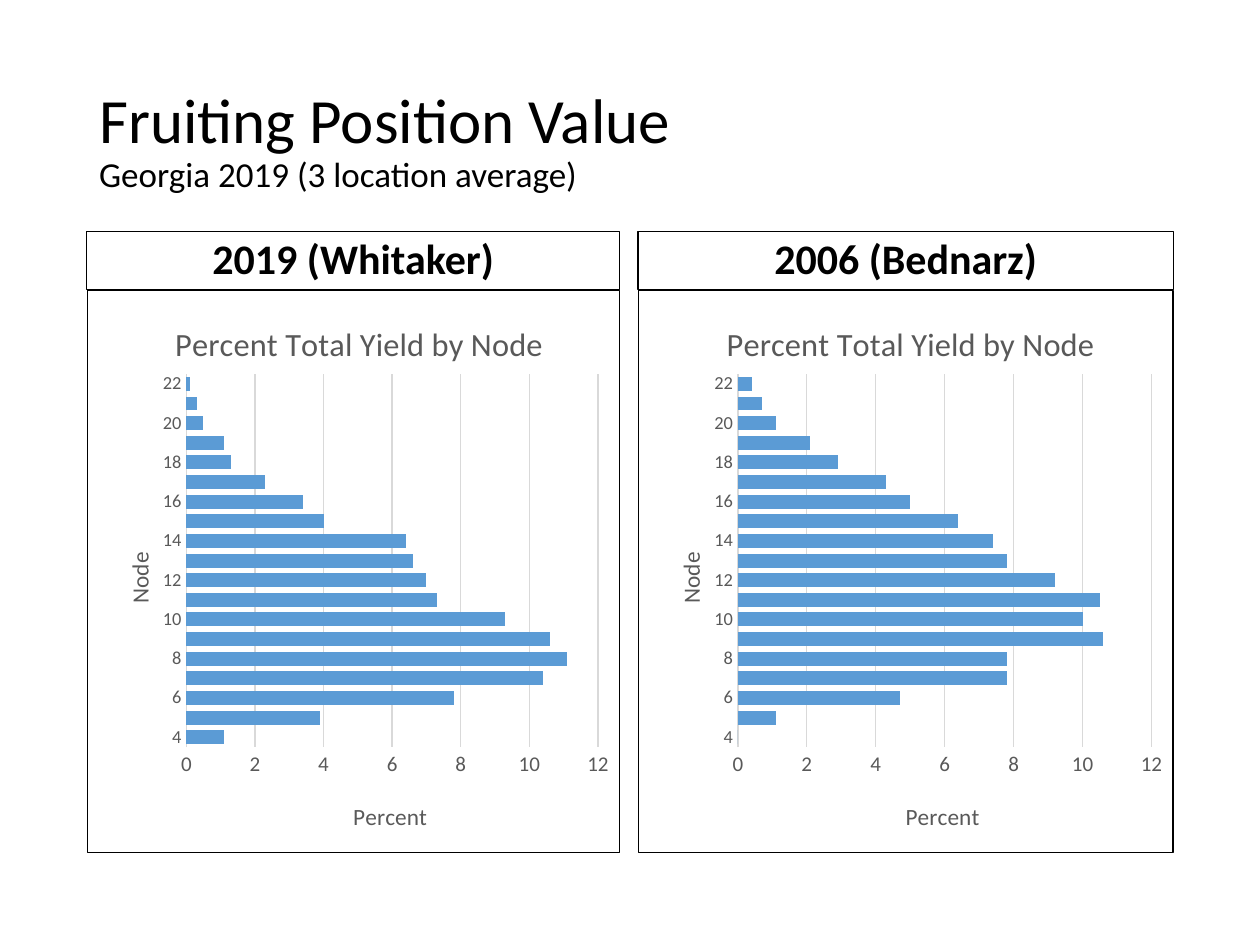
import pptx
import pptx.util
import pptx.chart.data
import pptx.dml.color
import pptx.enum.chart
import pptx.enum.shapes
import pptx.enum.text
import pptx.oxml
import pptx.oxml.ns

Pt = pptx.util.Pt
RGBColor = pptx.dml.color.RGBColor
MSO_ANCHOR = pptx.enum.text.MSO_ANCHOR

# Content
TITLE = "Fruiting Position Value"
SUBTITLE = "Georgia 2019 (3 location average)"
CHART_TITLE = "Percent Total Yield by Node"
NODES = [str(n) for n in range(4, 23)]
PANELS = [
    # heading, left, width, percent of yield by node
    ("2019 (Whitaker)", 49.6, 304.6,
     [1.1, 3.9, 7.8, 10.4, 11.1, 10.6, 9.3, 7.3, 7, 6.6,
      6.4, 4, 3.4, 2.3, 1.3, 1.1, 0.5, 0.3, 0.1]),
    ("2006 (Bednarz)", 364.5, 306.1,
     [0, 1.1, 4.7, 7.8, 7.8, 10.6, 10, 10.5, 9.2, 7.8,
      7.4, 6.4, 5, 4.3, 2.9, 2.1, 1.1, 0.7, 0.4]),
]

# Style
FONT = "Calibri"
BLACK = RGBColor(0x00, 0x00, 0x00)
GREY = RGBColor(0x59, 0x59, 0x59)
GRID = RGBColor(0xD9, 0xD9, 0xD9)
BLUE = RGBColor(0x5B, 0x9B, 0xD5)
HEAD_TOP, HEAD_H, CHART_H = 132.5, 33.1, 321.8


def set_font(font, size, color, bold=False):
    font.name, font.size, font.bold = FONT, Pt(size), bold
    font.color.rgb = color


def set_line(line, color):
    line.color.rgb = color
    line.width = Pt(0.75)


def layout_xml(x, y, w=None, h=None):
    """Manual chart layout, in fractions of the chart area."""
    parts = [("xMode", "edge"), ("yMode", "edge"), ("x", x), ("y", y)]
    if w is not None:
        parts = [("layoutTarget", "inner")] + parts + [("w", w), ("h", h)]
    body = "".join(f'<c:{tag} val="{val}"/>' for tag, val in parts)
    return pptx.oxml.parse_xml(
        f'<c:layout {pptx.oxml.ns.nsdecls("c")}>'
        f'<c:manualLayout>{body}</c:manualLayout></c:layout>')


def add_title(owner, text, size, x, y):
    """Title a chart or an axis and place it."""
    owner.has_title = True
    title = owner.chart_title if hasattr(owner, "chart_title") else owner.axis_title
    p = title.text_frame.paragraphs[0]
    p.text = text
    set_font(p.font, size, GREY)
    el = title._element
    for old in el.findall(pptx.oxml.ns.qn("c:layout")):
        el.remove(old)
    el.find(pptx.oxml.ns.qn("c:tx")).addnext(layout_xml(x, y))


def add_heading(slide, text, left, width):
    sp = slide.shapes.add_shape(pptx.enum.shapes.MSO_SHAPE.RECTANGLE,
                                Pt(left), Pt(HEAD_TOP), Pt(width), Pt(HEAD_H))
    sp.shadow.inherit = False
    sp.fill.background()
    set_line(sp.line, BLACK)
    tf = sp.text_frame
    tf.word_wrap = True
    tf.vertical_anchor = MSO_ANCHOR.BOTTOM
    p = tf.paragraphs[0]
    p.text = text
    p.alignment = pptx.enum.text.PP_ALIGN.CENTER
    p.line_spacing = 0.9
    p.space_before = Pt(10)
    set_font(p.font, 24, BLACK, bold=True)


def add_yield_chart(slide, values, left, width):
    data = pptx.chart.data.CategoryChartData()
    data.categories = NODES
    data.add_series("Series 1", values)
    chart = slide.shapes.add_chart(
        pptx.enum.chart.XL_CHART_TYPE.BAR_CLUSTERED, Pt(left),
        Pt(HEAD_TOP + HEAD_H), Pt(width), Pt(CHART_H), data).chart
    chart.has_legend = False
    set_font(chart.font, 10, BLACK)

    # Bars
    plot = chart.plots[0]
    plot.gap_width = 40
    plot.vary_by_categories = False
    fill = plot.series[0].format.fill
    fill.solid()
    fill.fore_color.rgb = BLUE

    # Axes
    cat, val = chart.category_axis, chart.value_axis
    for axis, size in ((cat, 10.5), (val, 12)):
        axis.major_tick_mark = pptx.enum.chart.XL_TICK_MARK.NONE
        axis.minor_tick_mark = pptx.enum.chart.XL_TICK_MARK.NONE
        set_font(axis.tick_labels.font, size, GREY)
    set_line(cat.format.line, GRID)
    skip = pptx.oxml.parse_xml(
        f'<c:tickLblSkip {pptx.oxml.ns.nsdecls("c")} val="2"/>')
    cat._element.find(pptx.oxml.ns.qn("c:noMultiLvlLbl")).addprevious(skip)
    val.minimum_scale, val.maximum_scale, val.major_unit = 0, 12, 2
    val.format.line.fill.background()
    val.has_major_gridlines = True
    set_line(val.major_gridlines.format.line, GRID)

    # Titles
    add_title(chart, CHART_TITLE, 18.6, 0.154, 0.045)
    add_title(cat, "Node", 13.3, 0.06, 0.458)
    add_title(val, "Percent", 13.3, 0.492, 0.9)

    # Plot position and outer border
    area = chart._chartSpace.chart.plotArea
    for old in area.findall(pptx.oxml.ns.qn("c:layout")):
        area.remove(old)
    area.insert(0, layout_xml(0.186, 0.149, 0.774, 0.664))
    border = pptx.oxml.parse_xml(
        f'<c:spPr {pptx.oxml.ns.nsdecls("c", "a")}><a:noFill/>'
        f'<a:ln w="{Pt(0.75)}"><a:solidFill><a:srgbClr val="{BLACK}"/>'
        '</a:solidFill></a:ln></c:spPr>')
    chart._chartSpace.chart.addnext(border)


def main():
    prs = pptx.Presentation()
    prs.slide_width, prs.slide_height = Pt(720), Pt(540)
    slide = prs.slides.add_slide(prs.slide_layouts[6])

    # Slide title
    tf = slide.shapes.add_textbox(Pt(49.6), Pt(28.8), Pt(620.8), Pt(104.4)).text_frame
    tf.word_wrap = True
    tf.vertical_anchor = MSO_ANCHOR.MIDDLE
    p = tf.paragraphs[0]
    p.line_spacing = 0.9
    for i, (text, size) in enumerate(((TITLE, 36), (SUBTITLE, 20))):
        if i:
            p.add_line_break()
        r = p.add_run()
        r.text = text
        set_font(r.font, size, BLACK)

    # Heading and chart of each study
    for heading, left, width, values in PANELS:
        add_heading(slide, heading, left, width)
        add_yield_chart(slide, values, left, width)

    prs.save("out.pptx")


if __name__ == "__main__":
    main()
